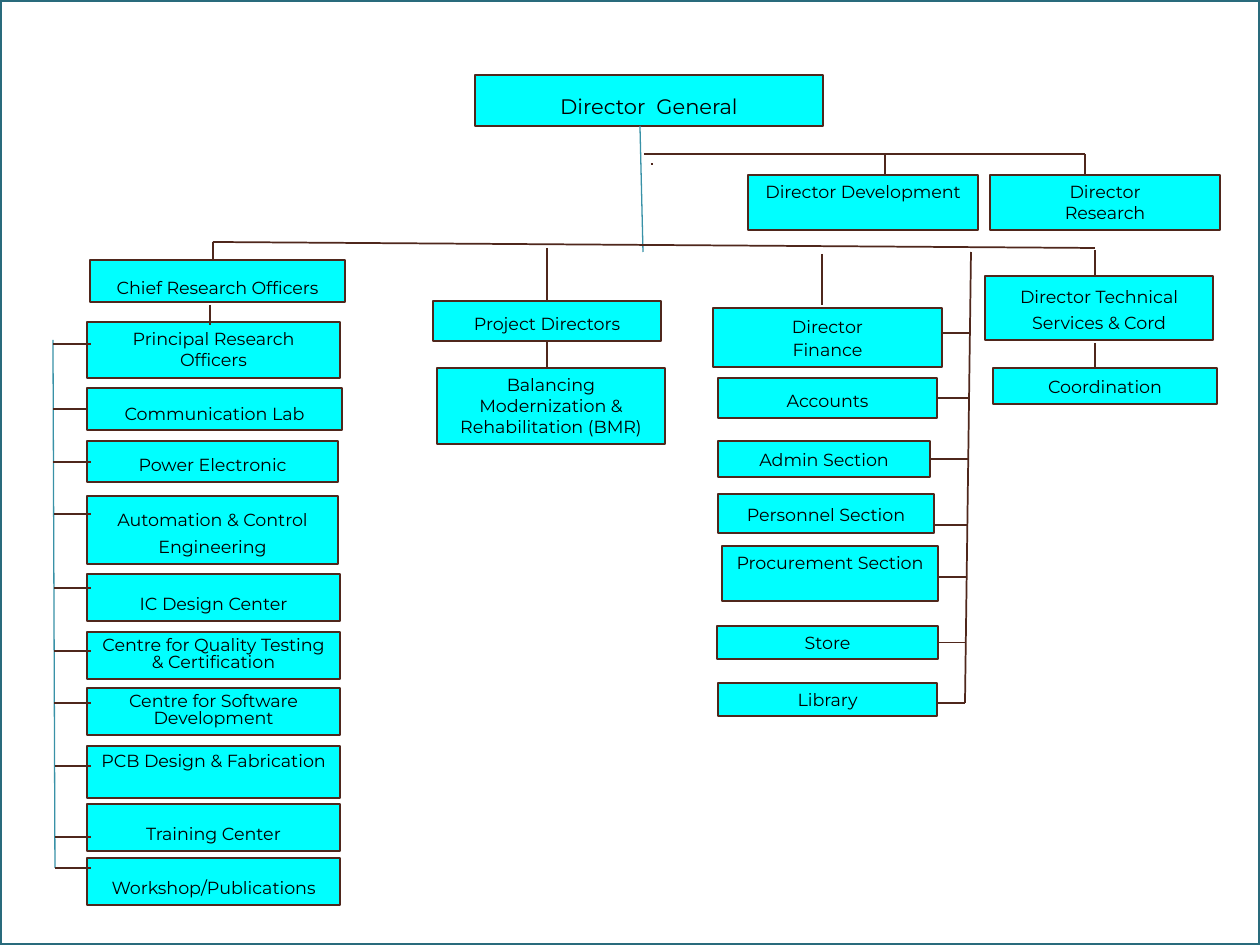
from pptx import Presentation
from pptx.dml.color import RGBColor
from pptx.enum.shapes import MSO_CONNECTOR, MSO_SHAPE
from pptx.enum.text import MSO_ANCHOR, PP_ALIGN
from pptx.oxml.ns import qn
from pptx.util import Emu, Pt
from lxml.etree import SubElement

WIDTH, HEIGHT = 1260, 945
EMU_PER_PX = 914400 / 126
CYAN, BROWN, TEAL, FRAME = "00FFFF", "4F271C", "3891A7", "296B7C"
TOP, LEFT, BOTTOM, RIGHT = range(4)

# Vertical trunks: (x, y) at the top and at the bottom
LAB_TRUNK = ((53, 340), (55, 868))
FINANCE_TRUNK = ((971, 252), (965, 703))

# Text, left, top, width, height, line spacing, y of the stub (None: middle of the side)
LABS = [
    ("Principal Research Officers", 87, 322, 253, 56, 1.0, 344),
    ("Communication Lab", 87, 388, 255, 42, 1.4, None),
    ("Power Electronic", 87, 441, 251, 41, 1.3, 462),
    ("Automation & Control Engineering", 87, 496, 251, 68, 1.3, 514),
    ("IC Design Center", 87, 574, 253, 47, 1.6, 588),
    ("Centre for Quality Testing & Certification", 87, 632, 253, 47, 0.8, 651),
    ("Centre for Software Development", 87, 688, 253, 47, 0.8, 703),
    ("PCB Design & Fabrication", 87, 746, 253, 52, 0.9, 766),
    ("Training Center", 87, 804, 253, 47, 1.6, 837),
    ("Workshop/Publications", 87, 858, 253, 47, 1.6, 868),
]
FINANCE_SECTIONS = [
    ("Director\nFinance", 713, 308, 229, 59, 1.1, 333),
    ("Accounts", 718, 378, 219, 40, 1.3, None),
    ("Admin Section", 718, 441, 212, 36, 1.1, None),
    ("Personnel Section", 718, 494, 216, 39, 1.2, 525),
    ("Procurement Section", 722, 546, 216, 55, 1.0, 577),
    ("Store", 717, 626, 221, 33, 1.0, None),
    ("Library", 718, 683, 219, 33, 1.0, 703),
]


def px(value):
    return Emu(round(value * EMU_PER_PX))


def color(hex_string):
    return RGBColor.from_string(hex_string)


def add_rectangle(slide, left, top, width, height, fill, line, line_width):
    shape = slide.shapes.add_shape(
        MSO_SHAPE.RECTANGLE, px(left), px(top), px(width), px(height))
    shape.shadow.inherit = False
    shape.fill.solid()
    shape.fill.fore_color.rgb = color(fill)
    shape.line.color.rgb = color(line)
    shape.line.width = Pt(line_width)
    return shape


def write_text(shape, text, size=10, spacing=1.0, font="Montserrat", ink="000000"):
    frame = shape.text_frame
    frame.word_wrap = True
    frame.vertical_anchor = MSO_ANCHOR.TOP
    frame.text = text
    for paragraph in frame.paragraphs:
        paragraph.alignment = PP_ALIGN.CENTER
        paragraph.line_spacing = spacing
        for run in paragraph.runs:
            run.font.size = Pt(size)
            run.font.name = font
            run.font.color.rgb = color(ink)


def add_box(slide, text, left, top, width, height, spacing=1.0, size=10):
    box = add_rectangle(slide, left, top, width, height, CYAN, BROWN, 1)
    write_text(box, text, size=size, spacing=spacing)
    return box


def add_line(slide, start, end, line=BROWN, width=1):
    connector = slide.shapes.add_connector(
        MSO_CONNECTOR.STRAIGHT, *(px(value) for value in (*start, *end)))
    connector.line.color.rgb = color(line)
    connector.line.width = Pt(width)
    properties = connector._element.find(qn("p:spPr"))
    SubElement(properties, qn("a:effectLst"))
    return connector


def trunk_x(trunk, y):
    (x1, y1), (x2, y2) = trunk
    return x1 + (x2 - x1) * (y - y1) / (y2 - y1)


def add_branches(slide, rows, trunk, side, overlap=0):
    """Boxes, each tied to a vertical trunk by a level stub."""
    for text, left, top, width, height, spacing, stub_y in rows:
        box = add_box(slide, text, left, top, width, height, spacing)
        y = top + height / 2 if stub_y is None else stub_y
        edge = left + overlap if side == LEFT else left + width
        stub = add_line(slide, (edge, y), (trunk_x(trunk, y), y))
        if stub_y is None:
            stub.begin_connect(box, side)


def add_director_general(slide):
    add_box(slide, "Director  General", 475, 75, 348, 51, 1.5, size=12)
    add_line(slide, (640, 126), (643, 252), TEAL, 0.75)
    # Staff directors on a side branch
    add_line(slide, (651, 164), (653, 164), width=0.75)
    add_line(slide, (644, 154), (1085, 154), width=0.75)
    for text, left, drop_x in (("Director Development", 748, 885),
                               ("Director\nResearch", 990, 1085)):
        add_box(slide, text, left, 175, 230, 55)
        add_line(slide, (drop_x, 154), (drop_x, 175))


def add_project_directors(slide):
    projects = add_box(slide, "Project Directors", 433, 301, 228, 40, 1.3)
    add_box(slide, "Balancing Modernization & Rehabilitation (BMR)", 437, 368, 228, 76)
    middle = 433 + 228 / 2
    add_line(slide, (middle, 248), (middle, 301)).end_connect(projects, TOP)
    add_line(slide, (middle, 341), (middle, 368)).begin_connect(projects, BOTTOM)


def add_technical_services(slide):
    add_box(slide, "Director Technical Services & Cord", 985, 276, 228, 64, 1.2)
    add_box(slide, "Coordination", 993, 368, 224, 36, 1.1)
    add_line(slide, (1095, 250), (1095, 276))
    add_line(slide, (1095, 343), (1095, 368))


def main():
    presentation = Presentation()
    presentation.slide_width, presentation.slide_height = px(WIDTH), px(HEIGHT)
    slide = presentation.slides.add_slide(presentation.slide_layouts[6])

    # Slide frame
    add_rectangle(slide, 0, 0, WIDTH, HEIGHT, "FFFFFF", FRAME, 2)

    # Top management and the main crossbar
    add_director_general(slide)
    add_line(slide, (213, 242), (1095, 248))

    # Research officers and their labs
    add_box(slide, "Chief Research Officers", 90, 260, 255, 42, 1.5)
    add_line(slide, (213, 242), (213, 260))
    add_line(slide, *LAB_TRUNK, TEAL, 0.75)
    add_branches(slide, LABS, LAB_TRUNK, LEFT, overlap=4)
    add_line(slide, (210, 305), (210, 325))

    # Projects, finance and technical services
    add_project_directors(slide)
    add_line(slide, (822, 254), (822, 305))
    add_line(slide, *FINANCE_TRUNK)
    add_branches(slide, FINANCE_SECTIONS, FINANCE_TRUNK, RIGHT)
    add_technical_services(slide)

    presentation.save("out.pptx")


if __name__ == "__main__":
    main()
